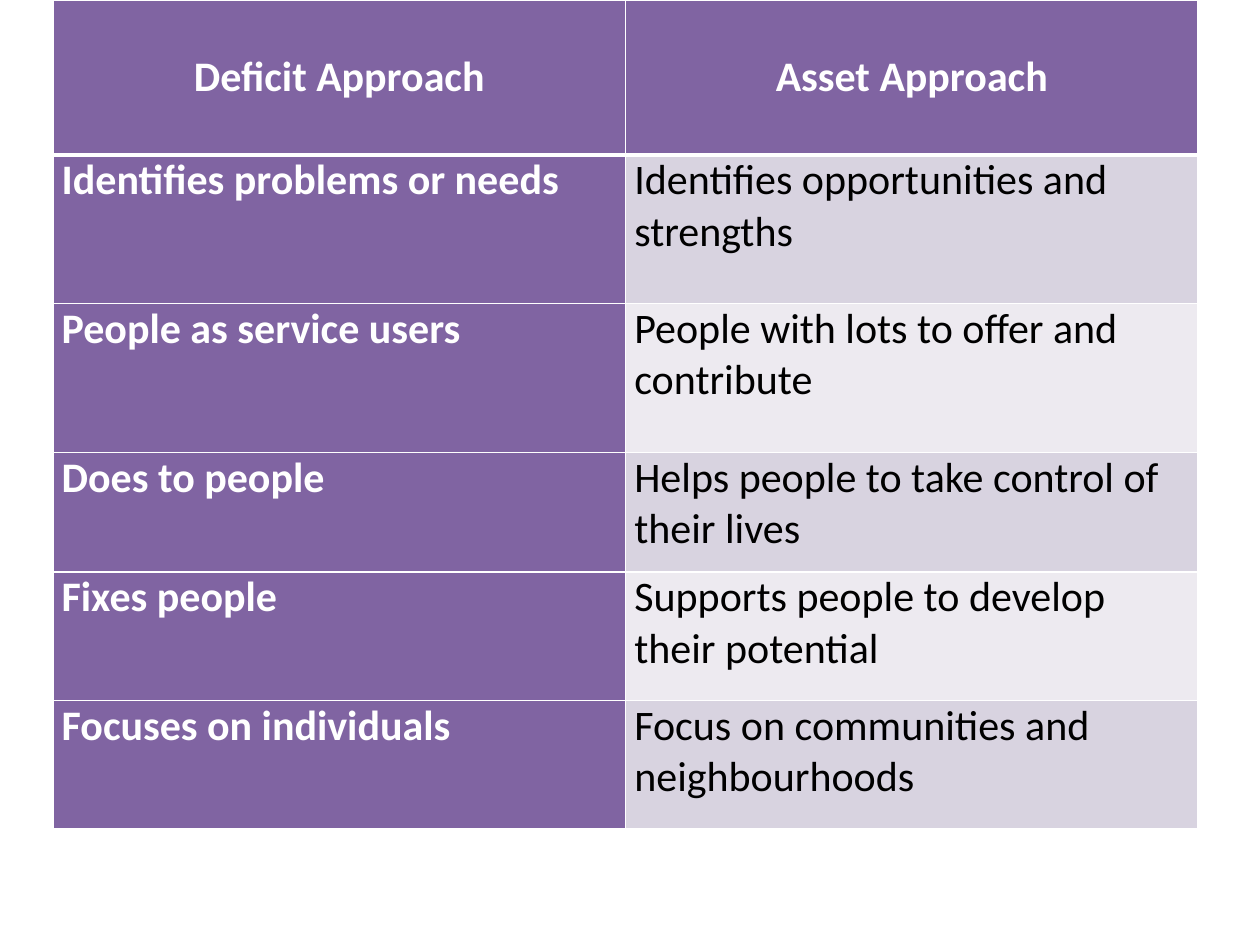
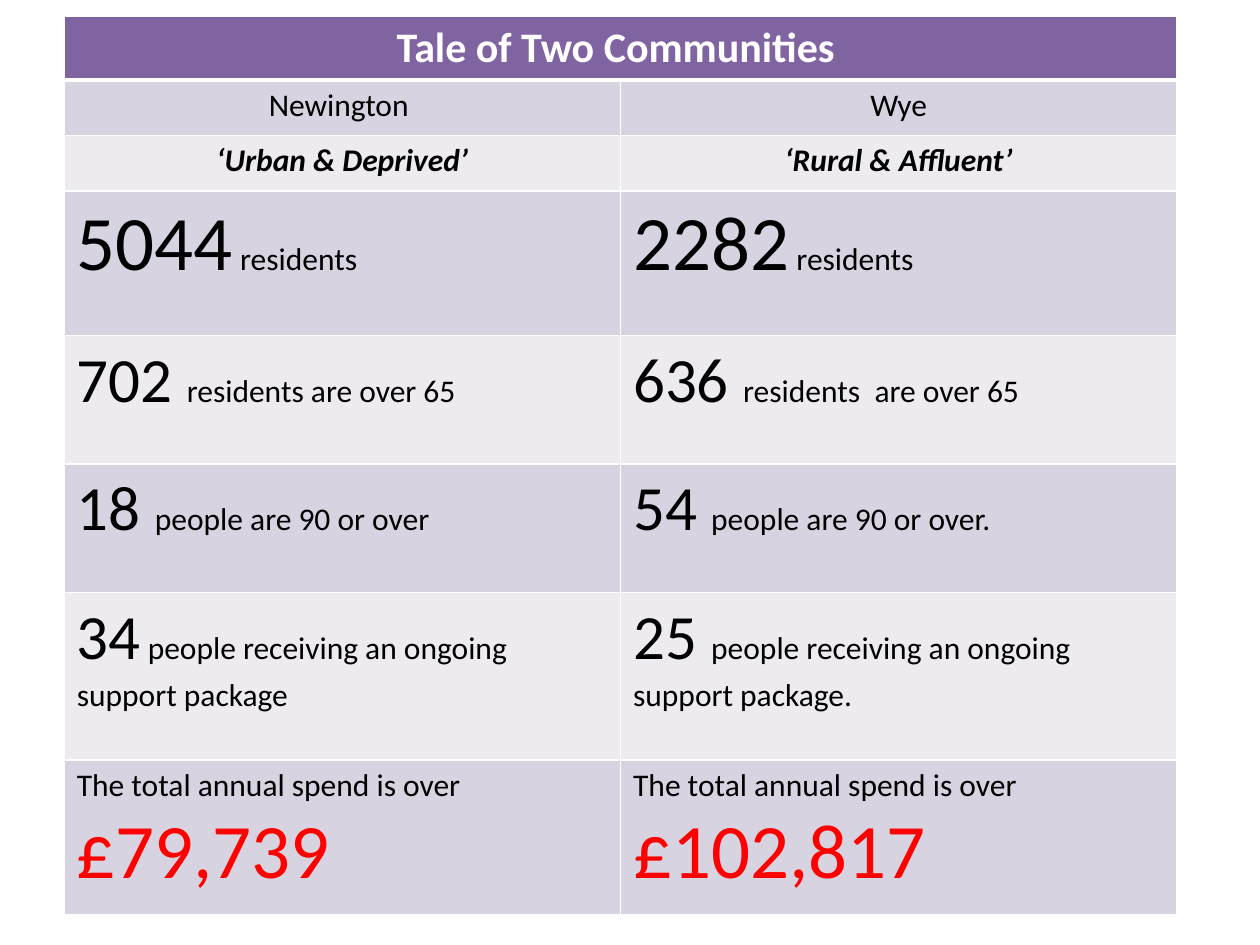
from dataclasses import dataclass
from typing import NamedTuple

from lxml import etree
from pptx import Presentation
from pptx import util as u
from pptx.dml.color import RGBColor
from pptx.enum import text
from pptx.oxml import ns

SLIDE_WIDTH, SLIDE_HEIGHT = u.Inches(10), u.Inches(7.5)
FONT = "Calibri"
PURPLE, LILAC, PALE = "8064A2", "D8D3E0", "EDEAF0"
WHITE, BLACK, RED = "FFFFFF", "000000", "FF0000"
BANDS = (LILAC, PALE)


class Run(NamedTuple):
    words: str
    size: int = 18
    color: str = BLACK
    bold: bool = False
    italic: bool = False


@dataclass
class Cell:
    runs: list[Run]
    fill: str
    centered: bool = False


@dataclass
class Grid:
    left: float
    top: float
    width: float
    row_heights: list[float]
    rows: list[list[Cell]]
    side_inset: float = 0.1
    end_inset: float = 0.05


def rgb(value: str) -> RGBColor:
    return RGBColor.from_string(value)


def header(words: str) -> Cell:
    return Cell([Run(words, 24, WHITE, True)], PURPLE, True)


def draw_borders(cell, row: int) -> None:
    properties = cell._tc.get_or_add_tcPr()
    widths = {"lnL": 1, "lnR": 1, "lnT": 3 if row == 1 else 1, "lnB": 3 if row == 0 else 1}
    for position, (side, points) in enumerate(widths.items()):
        line = etree.Element(ns.qn(f"a:{side}"), w=str(u.Pt(points)))
        fill = etree.SubElement(line, ns.qn("a:solidFill"))
        etree.SubElement(fill, ns.qn("a:srgbClr"), val=WHITE)
        properties.insert(position, line)


def write_cell(cell, content: Cell, grid: Grid, row: int) -> None:
    cell.fill.solid()
    cell.fill.fore_color.rgb = rgb(content.fill)
    cell.margin_left = cell.margin_right = u.Inches(grid.side_inset)
    cell.margin_top = cell.margin_bottom = u.Inches(grid.end_inset)
    cell.vertical_anchor = text.MSO_ANCHOR.MIDDLE if row == 0 else text.MSO_ANCHOR.TOP
    paragraph = cell.text_frame.paragraphs[0]
    paragraph.alignment = text.PP_ALIGN.CENTER if content.centered else text.PP_ALIGN.LEFT
    for piece in content.runs:
        run = paragraph.add_run()
        run.text = piece.words
        run.font.name = FONT
        run.font.size = u.Pt(piece.size)
        run.font.bold = piece.bold
        run.font.italic = piece.italic
        run.font.color.rgb = rgb(piece.color)
    draw_borders(cell, row)


def add_grid_slide(presentation, grid: Grid) -> None:
    slide = presentation.slides.add_slide(presentation.slide_layouts[6])
    columns = max(len(row) for row in grid.rows)
    shape = slide.shapes.add_table(
        len(grid.rows), columns,
        int(SLIDE_WIDTH * grid.left), int(SLIDE_HEIGHT * grid.top),
        int(SLIDE_WIDTH * grid.width), u.Inches(sum(grid.row_heights)),
    )
    table = shape.table
    table.first_row = table.horz_banding = False
    for row, (height, contents) in enumerate(zip(grid.row_heights, grid.rows)):
        table.rows[row].height = u.Inches(height)
        if len(contents) < columns:
            table.cell(row, 0).merge(table.cell(row, columns - 1))
        for column, content in enumerate(contents):
            write_cell(table.cell(row, column), content, grid, row)


def approaches() -> Grid:
    pairs = [
        ("Identifies problems or needs", "Identifies opportunities and strengths"),
        ("People as service users", "People with lots to offer and contribute"),
        ("Does to people", "Helps people to take control of their lives"),
        ("Fixes people", "Supports people to develop their potential"),
        ("Focuses on individuals", "Focus on communities and neighbourhoods"),
    ]
    rows = [[header("Deficit Approach"), header("Asset Approach")]]
    for index, (deficit, asset) in enumerate(pairs):
        rows.append([
            Cell([Run(deficit, 24, WHITE, True)], PURPLE),
            Cell([Run(asset, 24)], BANDS[index % 2]),
        ])
    heights = [1.23, 1.18, 1.18, 0.95, 1.02, 1.02]
    return Grid(0.042, 0, 0.909, heights, rows, 0.07, 0)


def communities() -> Grid:
    def spend(amount: str) -> list[Run]:
        return [Run("The total annual spend is over "), Run(amount, 44, RED)]

    facts = [
        ([Run("Newington ")], [Run("Wye")]),
        ([Run("‘Urban & Deprived’", bold=True, italic=True)],
         [Run("‘Rural & Affluent’", bold=True, italic=True)]),
        ([Run("5044", 44), Run(" residents")], [Run("2282", 44), Run(" residents")]),
        ([Run("702 ", 36), Run("residents are over 65")],
         [Run("636 ", 36), Run("residents"), Run(" ", 36), Run("are over 65")]),
        ([Run("18 ", 36), Run("people are 90 or over")],
         [Run("54 ", 36), Run("people are 90 or over.")]),
        ([Run("34", 36), Run(" people receiving an ongoing support package")],
         [Run("25 ", 36), Run("people receiving an ongoing support package.")]),
        (spend("£79,739"), spend("£102,817")),
    ]
    rows = [[header("Tale of Two Communities ")]]
    for index, pair in enumerate(facts):
        rows.append([Cell(runs, BANDS[index % 2], index < 2) for runs in pair])
    heights = [0.5, 0.44, 0.44, 1.15, 1.02, 1.02, 1.33, 1.23]
    return Grid(0.051, 0.017, 0.883, heights, rows)


def main() -> None:
    presentation = Presentation()
    presentation.slide_width, presentation.slide_height = SLIDE_WIDTH, SLIDE_HEIGHT
    for grid in (approaches(), communities()):
        add_grid_slide(presentation, grid)
    presentation.save("out.pptx")


if __name__ == "__main__":
    main()
